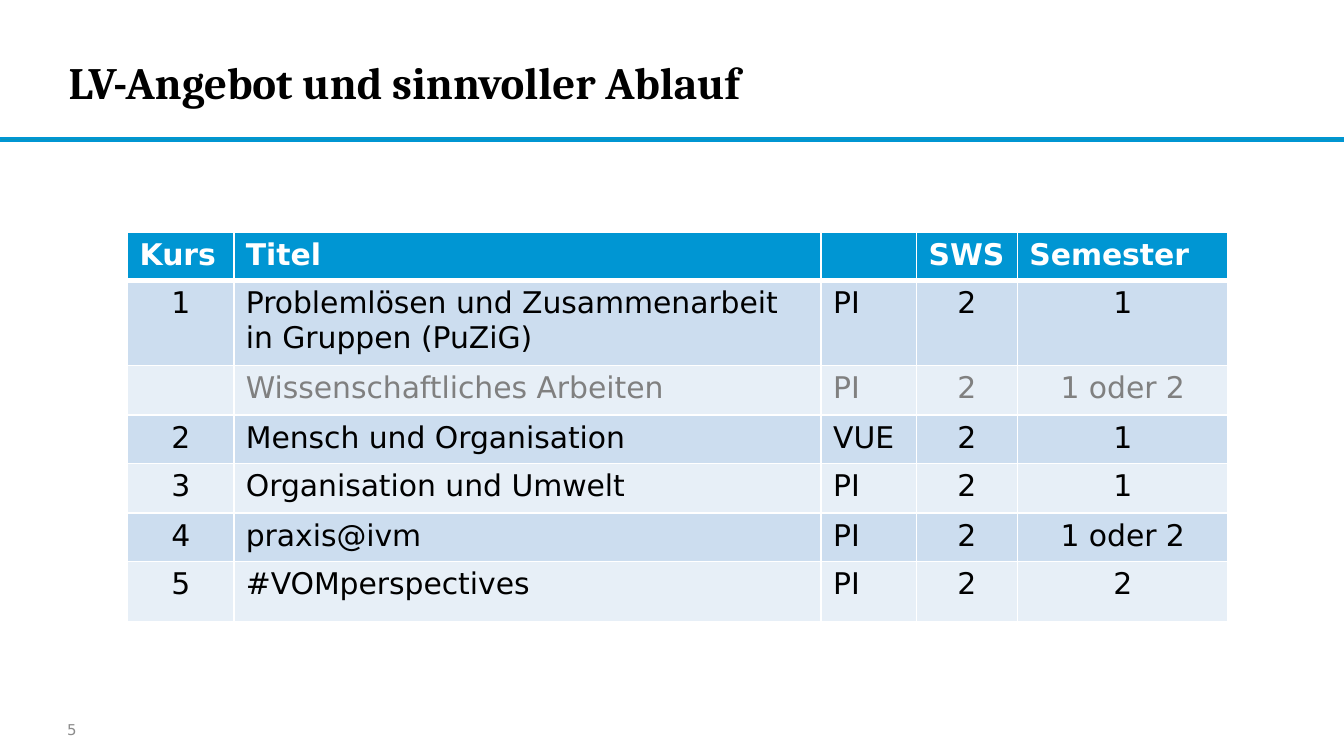
from lxml import etree
from pptx import Presentation
from pptx.dml.color import RGBColor
from pptx.enum.shapes import MSO_SHAPE
from pptx.enum.text import MSO_ANCHOR, PP_ALIGN
from pptx.oxml.ns import qn
from pptx.util import Inches, Pt

RECTANGLE = MSO_SHAPE.RECTANGLE
MIDDLE = MSO_ANCHOR.MIDDLE
LEFT, CENTER = PP_ALIGN.LEFT, PP_ALIGN.CENTER

SLIDE_WIDTH = 10
SLIDE_HEIGHT = SLIDE_WIDTH * 9 / 16

BLUE, WHITE, BLACK, GRAY = "0096D3", "FFFFFF", "000000", "808080"
BANDS = ["CCDDEF", "E7EFF7"]
HEADING_FONT, BODY_FONT = "Cambria", "DejaVu Sans"
TABLE_SIZE = 16

COLUMN_WIDTHS = [0.79, 4.37, 0.71, 0.75, 1.57]
ROW_HEIGHTS = [0.36, 0.63, 0.37, 0.36, 0.37, 0.36, 0.45]
COLUMN_ALIGNMENTS = [CENTER, LEFT, LEFT, CENTER, CENTER]
COURSES = [
    ["Kurs", "Titel", "", "SWS", "Semester"],
    ["1", "Problemlösen und Zusammenarbeit in Gruppen (PuZiG)", "PI", "2", "1"],
    ["", "Wissenschaftliches Arbeiten", "PI", "2", "1 oder 2"],
    ["2", "Mensch und Organisation", "VUE", "2", "1"],
    ["3", "Organisation und Umwelt", "PI", "2", "1"],
    ["4", "praxis@ivm", "PI", "2", "1 oder 2"],
    ["5", "#VOMperspectives", "PI", "2", "2"],
]


def rgb(value):
    return RGBColor.from_string(value)


def set_attributes(target, values):
    for name, value in values.items():
        setattr(target, name, value)


def add_run(p, text, font, size, color, bold=False):
    r = p.add_run()
    r.text = text
    set_attributes(r.font, {"name": font, "size": Pt(size), "bold": bold})
    r.font.color.rgb = rgb(color)


def add_text(s, box, text, font, size, color, bold=False, vertical_margin=0):
    tf = s.shapes.add_textbox(*map(Inches, box)).text_frame
    set_attributes(tf, {
        "word_wrap": True,
        "vertical_anchor": MIDDLE,
        "margin_left": 0,
        "margin_right": 0,
        "margin_top": Inches(vertical_margin),
        "margin_bottom": Inches(vertical_margin),
    })
    add_run(tf.paragraphs[0], text, font, size, color, bold)


def add_rule(s):
    sp = s.shapes.add_shape(
        RECTANGLE, 0, Inches(1.03), Inches(SLIDE_WIDTH), Inches(0.02))
    sp.shadow.inherit = False
    sp.fill.solid()
    sp.fill.fore_color.rgb = rgb("0C94B7")
    sp.line.color.rgb = rgb(BLUE)
    sp.line.width = Pt(1)


def add_borders(cell, widths):
    """Draw white borders; widths maps a side (L, R, T, B) to points."""
    tc_pr = cell._tc.get_or_add_tcPr()
    for index, (side, width) in enumerate(widths.items()):
        line = etree.Element(qn(f"a:ln{side}"), w=str(Pt(width)))
        fill = etree.SubElement(line, qn("a:solidFill"))
        etree.SubElement(fill, qn("a:srgbClr"), val=WHITE)
        tc_pr.insert(index, line)


def fill_cell(cell, text, align, fill, color, bold, borders):
    set_attributes(cell, {
        "margin_left": Inches(0.09),
        "margin_right": Inches(0.09),
        "margin_top": Inches(0.04),
        "margin_bottom": Inches(0.04),
    })
    cell.fill.solid()
    cell.fill.fore_color.rgb = rgb(fill)
    add_borders(cell, borders)
    p = cell.text_frame.paragraphs[0]
    p.alignment = align
    if text:
        add_run(p, text, BODY_FONT, TABLE_SIZE, color, bold)
    else:
        etree.SubElement(p._p, qn("a:endParaRPr"), sz=str(TABLE_SIZE * 100))


def add_course_table(s):
    table = s.shapes.add_table(
        len(COURSES), len(COLUMN_WIDTHS), Inches(0.95), Inches(1.73),
        Inches(sum(COLUMN_WIDTHS)), Inches(sum(ROW_HEIGHTS))).table
    for column, width in zip(table.columns, COLUMN_WIDTHS):
        column.width = Inches(width)
    for row, height in zip(table.rows, ROW_HEIGHTS):
        row.height = Inches(height)

    for i, texts in enumerate(COURSES):
        header = i == 0
        fill = BLUE if header else BANDS[(i - 1) % 2]
        # A course without a number is shown in gray
        color = WHITE if header else BLACK if texts[0] else GRAY
        borders = {"L": 1, "R": 1, "T": 3 if i == 1 else 1, "B": 3 if header else 1}
        for j, text in enumerate(texts):
            align = LEFT if header else COLUMN_ALIGNMENTS[j]
            fill_cell(table.cell(i, j), text, align, fill, color, header, borders)


def main():
    prs = Presentation()
    set_attributes(prs, {
        "slide_width": Inches(SLIDE_WIDTH),
        "slide_height": Inches(SLIDE_HEIGHT),
    })
    s = prs.slides.add_slide(prs.slide_layouts[6])
    add_rule(s)
    add_text(s, (0.51, 0.19, 7.48, 0.84), "LV-Angebot und sinnvoller Ablauf",
             HEADING_FONT, 24, BLACK, bold=True)
    add_course_table(s)
    add_text(s, (0.5, 5.28, 0.28, 0.3), "5", BODY_FONT, 8, "8C8C8C",
             vertical_margin=0.05)
    prs.save("out.pptx")


if __name__ == "__main__":
    main()
